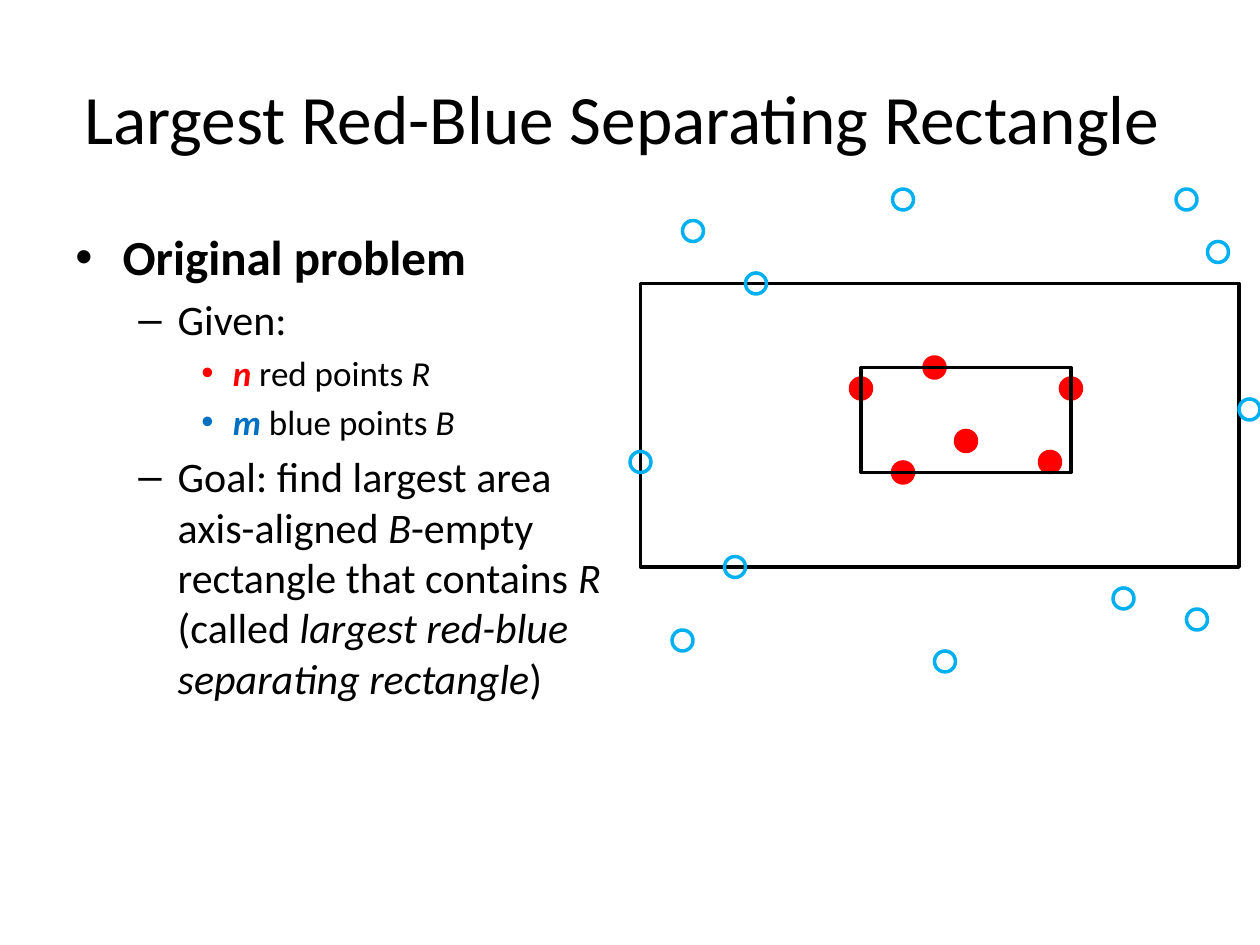
from lxml import etree
from pptx import Presentation
from pptx import util as u
from pptx.dml.color import RGBColor
from pptx.enum import shapes, text
from pptx.oxml import ns

BLACK = RGBColor(0x00, 0x00, 0x00)
RED = RGBColor(0xFF, 0x00, 0x00)
BLUE = RGBColor(0x00, 0x70, 0xC0)
SKY = RGBColor(0x00, 0xB0, 0xF0)

GRID = 6  # points per unit of the diagram's grid
RED_POINTS = [(92, 42), (82, 37), (102, 37), (89, 35), (100, 44), (86, 45)]
BLUE_POINTS = [(116, 24), (86, 19), (113, 19), (72, 27), (61, 44), (66, 22),
               (70, 54), (90, 63), (119, 39), (107, 57), (114, 59), (65, 61)]
SEPARATING_RECTANGLE = (61, 27, 118, 54)

# Level: bullet, text size, left margin, hanging indent
LEVELS = [("•", 28, 27, 27), ("–", 24, 58.5, 22.5), ("•", 20, 90, 18)]


def add_run(paragraph, content, size, color=BLACK, bold=False, italic=False, font="Calibri"):
    run = paragraph.add_run()
    run.text = content
    run.font.name = font
    run.font.size = u.Pt(size)
    run.font.color.rgb = color
    run.font.bold = bold
    run.font.italic = italic


def set_bullet(paragraph, level):
    bullet, size, margin, hanging = LEVELS[level]
    paragraph.level = level
    paragraph.space_before = u.Pt(size * 0.2)
    properties = paragraph._p.get_or_add_pPr()
    properties.set("marL", str(u.Pt(margin)))
    properties.set("indent", str(-u.Pt(hanging)))
    etree.SubElement(properties, ns.qn("a:buFont")).set("typeface", "Arial")
    etree.SubElement(properties, ns.qn("a:buChar")).set("char", bullet)


class SlideBuilder:
    def __init__(self, slide, line_width=2):
        self.slide = slide
        self.line_width = line_width

    def title(self, content, left, top, width, height, size):
        title = self.slide.shapes.title
        title.left, title.top, title.width, title.height = map(u.Pt, (left, top, width, height))
        frame = title.text_frame
        frame.auto_size = text.MSO_AUTO_SIZE.NONE
        frame.vertical_anchor = text.MSO_ANCHOR.MIDDLE
        paragraph = frame.paragraphs[0]
        paragraph.alignment = text.PP_ALIGN.CENTER
        add_run(paragraph, content, size)

    def bullets(self, items, left, top, width, height):
        """Add a list of (level, runs), each run being (text, format)."""
        frame = self.slide.shapes.add_textbox(*map(u.Pt, (left, top, width, height))).text_frame
        frame.word_wrap = True
        for index, (level, runs) in enumerate(items):
            paragraph = frame.add_paragraph() if index else frame.paragraphs[0]
            set_bullet(paragraph, level)
            for content, style in runs:
                add_run(paragraph, content, LEVELS[level][1], **style)

    def outline(self, kind, left, top, right, bottom, color, filled=False):
        """Add a shape whose edges are given in grid units."""
        shape = self.slide.shapes.add_shape(
            kind, *(u.Pt(GRID * n) for n in (left, top, right - left, bottom - top)))
        shape.shadow.inherit = False
        shape.line.color.rgb = color
        shape.line.width = u.Pt(self.line_width)
        if filled:
            shape.fill.solid()
            shape.fill.fore_color.rgb = color
        else:
            shape.fill.background()

    def rectangle(self, left, top, right, bottom):
        self.outline(shapes.MSO_SHAPE.RECTANGLE, left, top, right, bottom, BLACK)

    def points(self, centers, color, filled=False):
        for x, y in centers:
            self.outline(shapes.MSO_SHAPE.OVAL, x - 1, y - 1, x + 1, y + 1, color, filled)


def main():
    presentation = Presentation()
    presentation.slide_width, presentation.slide_height = u.Pt(720), u.Pt(540)
    title_only = presentation.slide_layouts[5]
    builder = SlideBuilder(presentation.slides.add_slide(title_only))

    builder.title("Largest Red-Blue Separating Rectangle ", 36, 21.6, 648, 90, size=39.6)
    italic = {"italic": True}
    builder.bullets([
        (0, [("Original problem", {"bold": True})]),
        (1, [("Given:", {})]),
        (2, [("n", {"color": RED, "bold": True, "italic": True}),
             (" red points ", {}), ("R", italic)]),
        (2, [("m", {"color": BLUE, "bold": True, "italic": True}),
             (" blue points ", {}), ("B", italic)]),
        (1, [("Goal: find largest area axis-aligned ", {}), ("B", italic),
             ("-empty rectangle that contains ", {}), ("R", italic), (" (called ", {}),
             ("largest red-blue separating rectangle", italic), (")", {})]),
    ], 36, 126, 330, 356.4)

    builder.points(RED_POINTS, RED, filled=True)
    columns, rows = zip(*RED_POINTS)
    builder.rectangle(min(columns), min(rows), max(columns), max(rows))
    builder.rectangle(*SEPARATING_RECTANGLE)
    builder.points(BLUE_POINTS, SKY)
    presentation.save("out.pptx")


if __name__ == "__main__":
    main()
